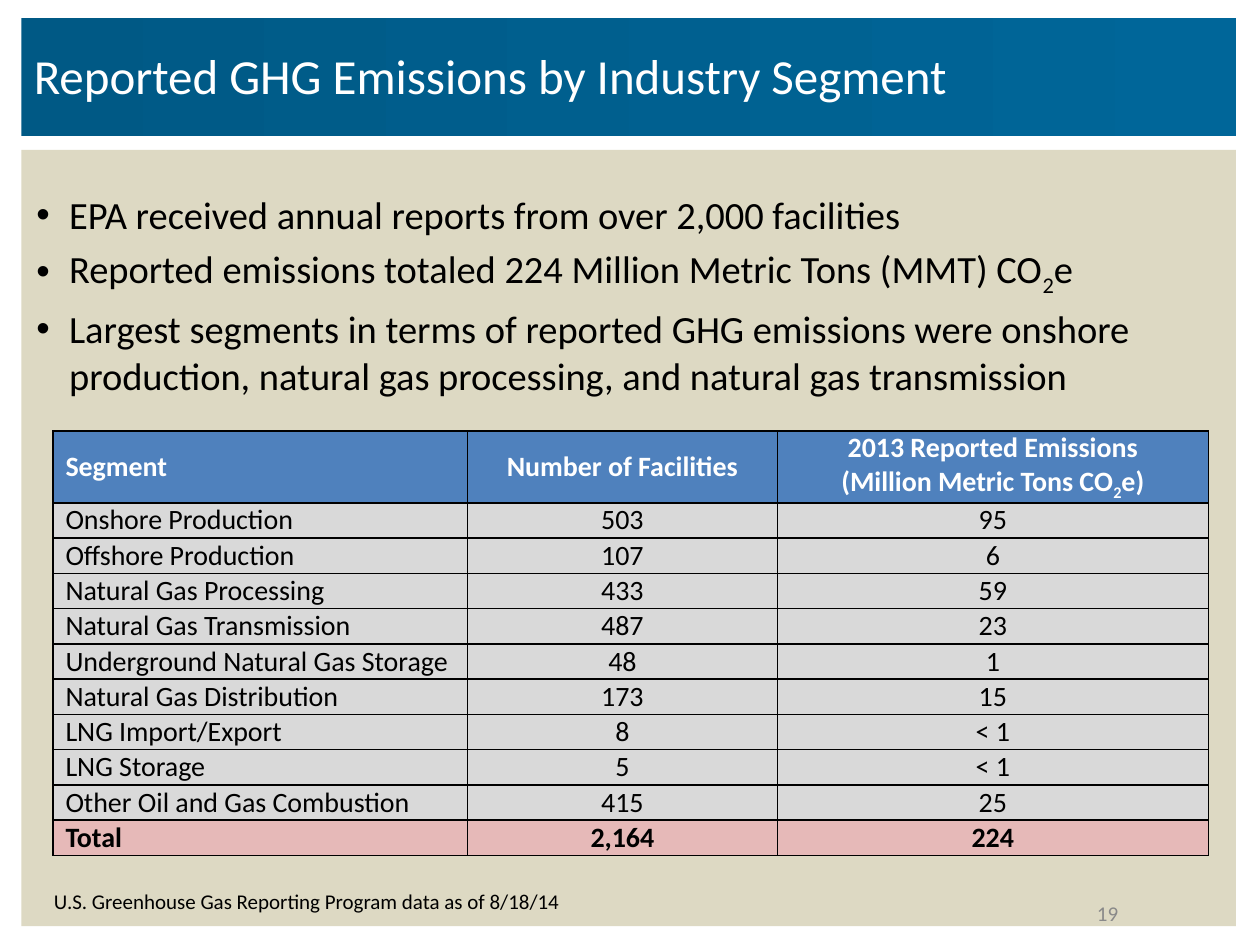
from pptx import Presentation
from pptx.dml.color import RGBColor
from pptx.enum.shapes import MSO_SHAPE as Shape
from pptx.enum.text import MSO_ANCHOR as Anchor, PP_ALIGN as Align
from pptx.oxml.ns import qn
from pptx.util import Inches, Pt
from lxml.etree import SubElement

BLACK = RGBColor(0x00, 0x00, 0x00)
WHITE = RGBColor(0xFF, 0xFF, 0xFF)
GRAY = RGBColor(0x89, 0x89, 0x89)
SAND = RGBColor(0xDD, 0xD9, 0xC3)
DEEP_BLUE = RGBColor(0x00, 0x59, 0x85)
BLUE = RGBColor(0x00, 0x66, 0x99)
HEADER_BLUE = RGBColor(0x4F, 0x81, 0xBD)
ROW_GRAY = RGBColor(0xD9, 0xD9, 0xD9)
TOTAL_PINK = RGBColor(0xE6, 0xB9, 0xB8)

BULLETS = [
    ["EPA received annual reports from over 2,000 facilities"],
    ["Reported emissions totaled 224 Million Metric Tons (MMT) CO", "2", "e"],
    ["Largest segments in terms of reported GHG emissions were onshore "
     "production, natural gas processing, and natural gas transmission"],
]
HEADER = [
    [["Segment"]],
    [["Number of Facilities"]],
    [["2013 Reported Emissions"], ["(Million Metric Tons CO", "2", "e)"]],
]
SEGMENTS = [
    ("Onshore Production", "503", "95"),
    ("Offshore Production", "107", "6"),
    ("Natural Gas Processing", "433", "59"),
    ("Natural Gas Transmission", "487", "23"),
    ("Underground Natural Gas Storage", "48", "1"),
    ("Natural Gas Distribution", "173", "15"),
    ("LNG Import/Export", "8", "< 1"),
    ("LNG Storage", "5", "< 1"),
    ("Other Oil and Gas Combustion", "415", "25"),
    ("Total", "2,164", "224"),
]


class SlideBuilder:
    font_name = "Calibri"

    def __init__(self, page):
        self.page = page

    def panel(self, left, top, width, height, *colors):
        """A rectangle with one fill colour, or a left-to-right gradient of two."""
        panel = self.page.shapes.add_shape(
            Shape.RECTANGLE, Inches(left), Inches(top), Inches(width), Inches(height))
        panel.shadow.inherit = False
        panel.line.fill.background()
        if len(colors) == 1:
            panel.fill.solid()
            panel.fill.fore_color.rgb = colors[0]
        else:
            panel.fill.gradient()
            panel.fill.gradient_angle = 0
            for stop, color in zip(panel.fill.gradient_stops, colors):
                stop.color.rgb = color

    def add_lines(self, frame, lines, size, color, bold=False, align=Align.LEFT, bullet=False):
        """Each line is a list of spans; every second span is a subscript."""
        for index, spans in enumerate(lines):
            para = frame.add_paragraph() if index else frame.paragraphs[0]
            if bullet:
                self.add_bullet(para)
                if index:
                    para.space_before = Pt(0.2 * size)
            para.alignment = align
            para.font.name = self.font_name
            para.font.size = Pt(size)
            para.font.bold = bold
            para.font.color.rgb = color
            for position, text in enumerate(spans):
                span = para.add_run()
                span.text = text
                if position % 2:
                    span._r.get_or_add_rPr().set("baseline", "-25000")

    def add_bullet(self, para):
        properties = para._p.get_or_add_pPr()
        properties.set("marL", str(Inches(0.26)))
        properties.set("indent", str(Inches(-0.26)))
        SubElement(properties, qn("a:buFont")).set("typeface", "Arial")
        SubElement(properties, qn("a:buChar")).set("char", "•")

    def text(self, left, top, width, height, lines, size, color,
             anchor=Anchor.TOP, **style):
        box = self.page.shapes.add_textbox(
            Inches(left), Inches(top), Inches(width), Inches(height))
        box.text_frame.word_wrap = True
        box.text_frame.vertical_anchor = anchor
        self.add_lines(box.text_frame, lines, size, color, **style)

    def table(self, left, top, widths, heights):
        frame = self.page.shapes.add_table(
            len(heights), len(widths), Inches(left), Inches(top),
            Inches(sum(widths)), Inches(sum(heights)))
        table = frame.table
        table.horz_banding = False
        for column, width in zip(table.columns, widths):
            column.width = Inches(width)
        for row, height in zip(table.rows, heights):
            row.height = Inches(height)
        return table

    def cell(self, cell, lines, fill, color, bold, align, margin, top_line, bottom_line):
        cell.margin_left = cell.margin_right = Inches(margin)
        cell.margin_top = cell.margin_bottom = 0
        cell.vertical_anchor = Anchor.MIDDLE
        properties = cell._tc.get_or_add_tcPr()
        for side, width in (("L", 1), ("R", 1), ("T", top_line), ("B", bottom_line)):
            line = SubElement(properties, qn(f"a:ln{side}"), w=str(Pt(width)))
            paint = SubElement(line, qn("a:solidFill"))
            SubElement(paint, qn("a:srgbClr"), val=str(BLACK))
        cell.fill.solid()
        cell.fill.fore_color.rgb = fill
        self.add_lines(cell.text_frame, lines, 16, color, bold, align)


def main():
    deck = Presentation()
    deck.slide_width, deck.slide_height = Inches(10), Inches(7.5)
    builder = SlideBuilder(deck.slides.add_slide(deck.slide_layouts[6]))

    # Background panels
    builder.panel(0.17, 1.19, 9.64, 6.16, SAND)
    builder.panel(0.17, 0.14, 9.64, 0.94, DEEP_BLUE, BLUE)

    # Title and bullets
    builder.text(0.17, -0.03, 8.63, 1.25, [["Reported GHG Emissions by Industry Segment"]],
                 28, WHITE, Anchor.MIDDLE)
    builder.text(0.19, 1.47, 9.61, 1.94, BULLETS, 22, BLACK, bullet=True)

    # Page number
    builder.text(7.75, 7, 2.08, 0.5, [["19"]], 12, GRAY, Anchor.MIDDLE, align=Align.CENTER)

    # Emissions table
    rows = [HEADER] + [[[[value]] for value in segment] for segment in SEGMENTS]
    last = len(rows) - 1
    table = builder.table(0.42, 3.42, [3.29, 2.46, 3.42], [0.56] + [0.28] * last)
    for r, row in enumerate(rows):
        fill = {0: HEADER_BLUE, last: TOTAL_PINK}.get(r, ROW_GRAY)
        edge_row = r in (0, last)
        for c, lines in enumerate(row):
            builder.cell(
                table.cell(r, c), lines, fill,
                color=BLACK if r else WHITE,
                bold=edge_row,
                align=Align.CENTER if c else Align.LEFT,
                margin=0.1 if edge_row or c == 0 else 0.07,
                top_line=1.5 if r == last else 1,
                bottom_line=1.5 if r == last - 1 else 1)

    # Source note
    builder.text(0.33, 7, 4.49, 0.5,
                 [["U.S. Greenhouse Gas Reporting Program data as of 8/18/14"]], 12, BLACK)

    deck.save("out.pptx")


if __name__ == "__main__":
    main()
